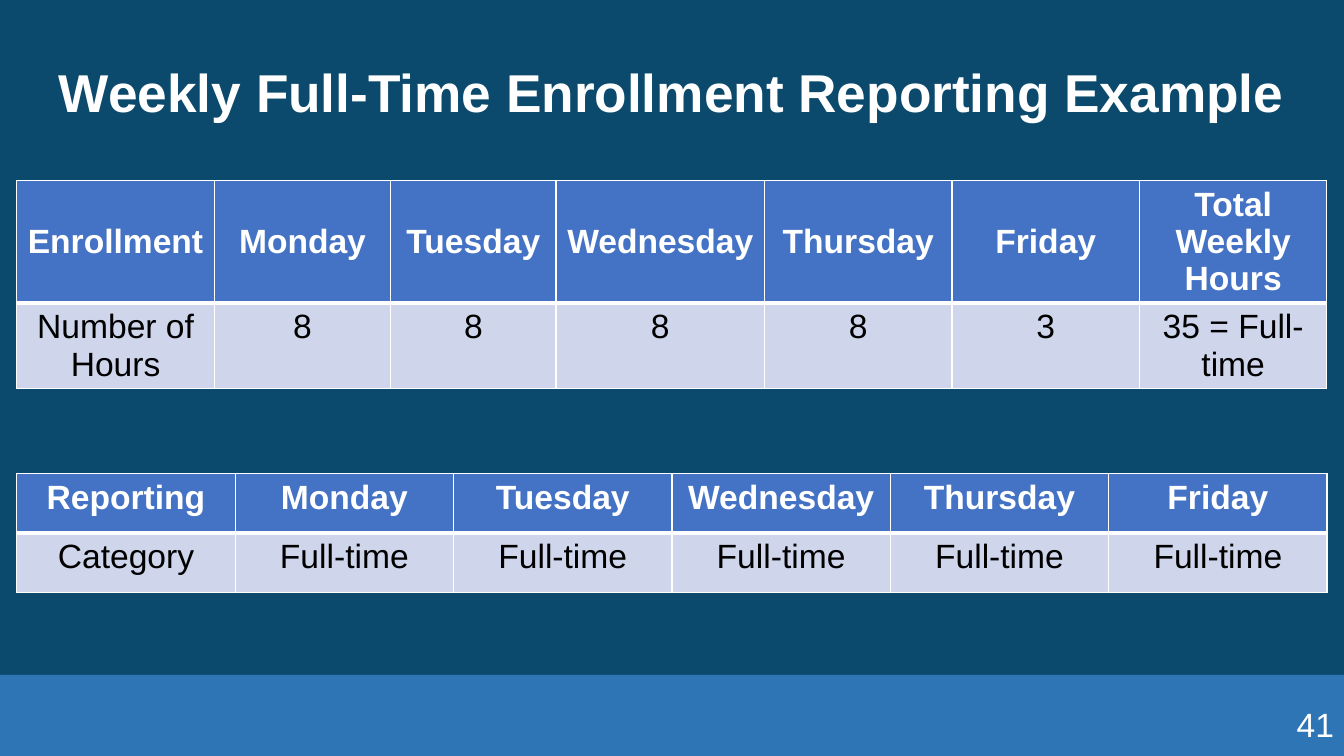
import pptx
import pptx.util
import pptx.dml.color
import pptx.enum.shapes
import pptx.enum.text
import pptx.oxml.ns
import lxml.etree

Pt = pptx.util.Pt
RGBColor = pptx.dml.color.RGBColor
Align = pptx.enum.text.PP_ALIGN
Anchor = pptx.enum.text.MSO_ANCHOR

NAVY = RGBColor(0x0C, 0x4A, 0x6D)
BAND = RGBColor(0x2E, 0x75, 0xB6)
HEAD = RGBColor(0x44, 0x72, 0xC4)
BODY = RGBColor(0xCF, 0xD5, 0xEA)
WHITE = RGBColor(0xFF, 0xFF, 0xFF)
BLACK = RGBColor(0x00, 0x00, 0x00)

FONT = "Arial"
LEFT = 12
WIDTH = 936
DAYS = ["Monday", "Tuesday", "Wednesday", "Thursday", "Friday"]


def write(frame, text, size, color, bold=False, align=Align.CENTER):
    para = frame.paragraphs[0]
    para.alignment = align
    run = para.add_run()
    run.text = text
    run.font.name = FONT
    run.font.size = Pt(size)
    run.font.bold = bold
    run.font.color.rgb = color
    return para


def add_title(slide, text):
    title = slide.shapes.title
    title.left, title.top = Pt(LEFT), Pt(16)
    title.width, title.height = Pt(WIDTH), Pt(104)
    frame = title.text_frame
    frame.word_wrap = True
    frame.vertical_anchor = Anchor.MIDDLE
    write(frame, text, 38, WHITE, bold=True).line_spacing = 0.9


def add_band(slide):
    band = slide.shapes.add_shape(
        pptx.enum.shapes.MSO_SHAPE.RECTANGLE, 0, Pt(482), Pt(960), Pt(58))
    band.shadow.inherit = False
    band.fill.solid()
    band.fill.fore_color.rgb = BAND
    band.line.fill.background()


def add_number(slide, text):
    box = slide.shapes.add_textbox(Pt(744), Pt(499), Pt(216), Pt(29))
    box.text_frame.word_wrap = True
    write(box.text_frame, text, 24, WHITE, align=Align.RIGHT)


def add_edge(cell, side, width):
    qn = pptx.oxml.ns.qn
    props = cell._tc.get_or_add_tcPr()
    edge = lxml.etree.SubElement(props, qn("a:ln" + side), w=str(Pt(width)))
    fill = lxml.etree.SubElement(edge, qn("a:solidFill"))
    lxml.etree.SubElement(fill, qn("a:srgbClr"), val=str(WHITE))


def fill_cell(cell, text, is_head, anchor):
    cell.vertical_anchor = anchor
    top, bottom = (1, 3) if is_head else (3, 1)
    for side, width in zip("LRTB", (1, 1, top, bottom)):
        add_edge(cell, side, width)
    cell.fill.solid()
    cell.fill.fore_color.rgb = HEAD if is_head else BODY
    write(cell.text_frame, text, 24, WHITE if is_head else BLACK, is_head)


def add_grid(slide, top, widths, heights, rows):
    grid = slide.shapes.add_table(
        len(rows), len(widths), Pt(LEFT), Pt(top), Pt(WIDTH), Pt(sum(heights))).table
    for col, width in zip(grid.columns, widths):
        col.width = Pt(width)
    for r, (height, texts) in enumerate(zip(heights, rows)):
        grid.rows[r].height = Pt(height)
        for c, text in enumerate(texts):
            middle = r == 0 and text in ["Enrollment"] + DAYS and len(widths) == 7
            anchor = Anchor.MIDDLE if middle else Anchor.TOP
            fill_cell(grid.cell(r, c), text, r == 0, anchor)


def main():
    deck = pptx.Presentation()
    deck.slide_width, deck.slide_height = Pt(960), Pt(540)
    slide = deck.slides.add_slide(deck.slide_layouts[5])
    slide.background.fill.solid()
    slide.background.fill.fore_color.rgb = NAVY

    add_band(slide)
    add_title(slide, "Weekly Full-Time Enrollment Reporting Example")
    add_grid(slide, 129, [141.1, 126, 118.1, 149] + [133.9] * 3, [87.6, 60.9], [
        ["Enrollment"] + DAYS + ["Total Weekly Hours"],
        ["Number of Hours", "8", "8", "8", "8", "3", "35 = Full-time"],
    ])
    add_grid(slide, 338.4, [WIDTH / 6] * 6, [42.5] * 2, [
        ["Reporting"] + DAYS,
        ["Category"] + ["Full-time"] * len(DAYS),
    ])
    add_number(slide, "41")
    deck.save("out.pptx")


if __name__ == "__main__":
    main()
